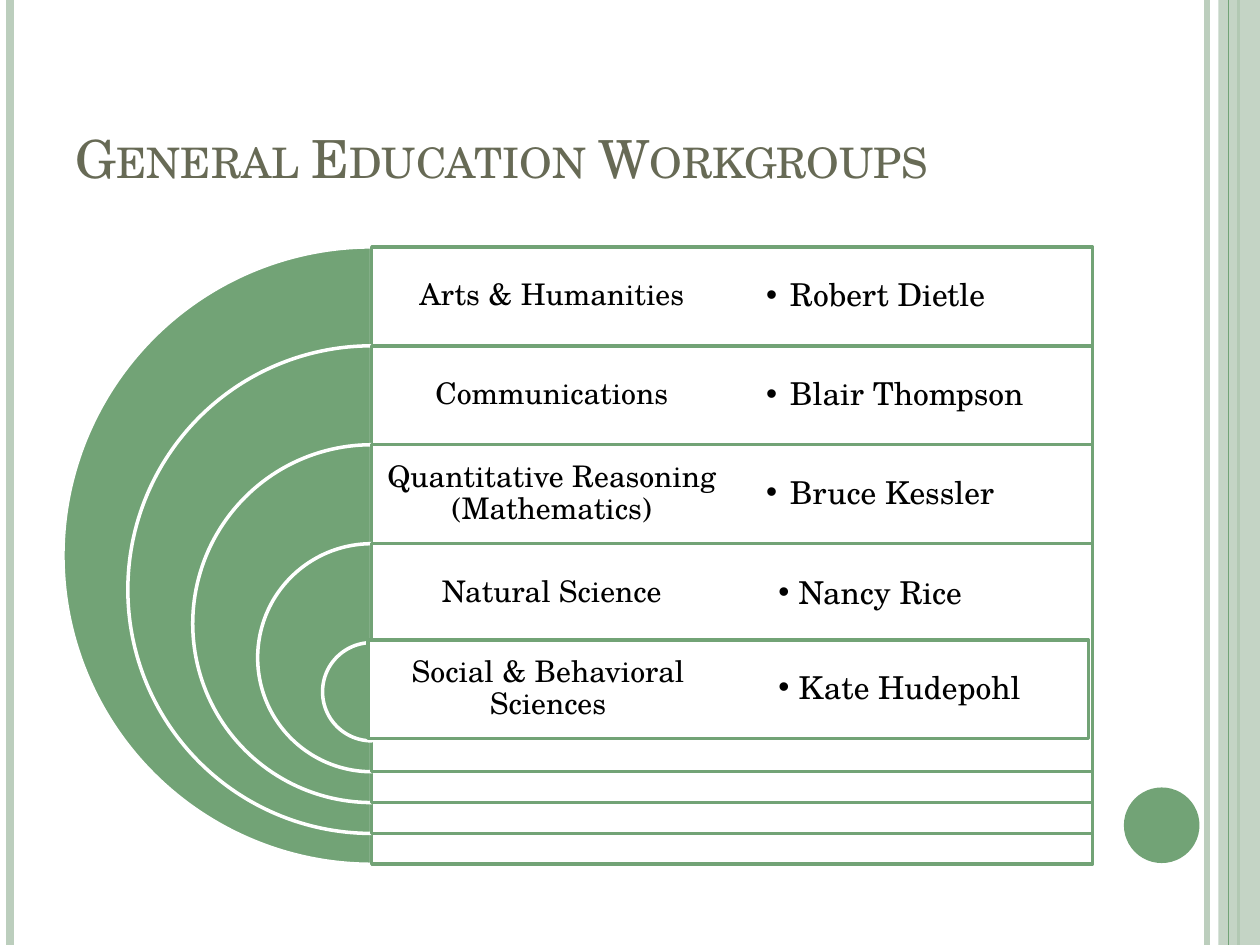
from dataclasses import dataclass

from lxml import etree
from pptx import Presentation
from pptx.dml.color import RGBColor
from pptx.enum import shapes, text
from pptx.oxml import ns
from pptx.util import Inches, Pt


@dataclass(frozen=True)
class Theme:
    font: str = "TeX Gyre Schola"
    green: RGBColor = RGBColor(0x72, 0xA3, 0x76)
    pale: RGBColor = RGBColor(0xBC, 0xCE, 0xBD)
    olive: RGBColor = RGBColor(0x67, 0x6A, 0x55)
    white: RGBColor = RGBColor(255, 255, 255)
    black: RGBColor = RGBColor(0, 0, 0)
    title_size: int = 30
    group_size: int = 17
    person_size: int = 18


THEME = Theme()

presentation = Presentation()
presentation.slide_width, presentation.slide_height = Inches(10), Inches(7.5)
slide = presentation.slides.add_slide(presentation.slide_layouts[6])


def add_block(kind, box, fill, line=None, opacity=100):
    """Add a preset shape; opacity is the fill's percentage."""
    shape = slide.shapes.add_shape(kind, *map(Inches, box))
    shape.shadow.inherit = False
    shape.fill.solid()
    shape.fill.fore_color.rgb = fill
    if opacity < 100:
        color = shape.fill._xPr.find(".//" + ns.qn("a:srgbClr"))
        etree.SubElement(color, ns.qn("a:alpha"), val=str(opacity * 1000))
    if line is None:
        shape.line.fill.background()
    else:
        shape.line.color.rgb = line
        shape.line.width = Pt(2)
    return shape


def add_text(box, words, size, color, anchor, inset, bullet_indent=None):
    """Add a one-paragraph text box, bulleted when bullet_indent is given."""
    frame = slide.shapes.add_textbox(*map(Inches, box)).text_frame
    frame.word_wrap = True
    frame.vertical_anchor = anchor
    frame.margin_left = frame.margin_right = Inches(inset[0])
    frame.margin_top = frame.margin_bottom = Inches(inset[1])
    paragraph = frame.paragraphs[0]
    paragraph.text = words
    paragraph.font.name = THEME.font
    paragraph.font.size = Pt(size)
    paragraph.font.color.rgb = color
    if bullet_indent is not None:
        properties = paragraph._p.get_or_add_pPr()
        properties.set("marL", str(Inches(bullet_indent)))
        properties.set("indent", str(-Inches(bullet_indent)))
        bullet_font = etree.Element(ns.qn("a:buFont"), typeface="Arial")
        bullet = etree.Element(ns.qn("a:buChar"), char="•")
        properties.insert(0, bullet_font)
        properties.insert(1, bullet)
    return paragraph


# Side rules, band and disc
for x, width, color in (
    (9.58, 3, THEME.pale),
    (0.08, 4.5, THEME.pale),
    (9.83, 1.5, THEME.green),
    (9.75, 0.75, THEME.green),
):
    if x == 9.83:
        pass
    rule = slide.shapes.add_connector(
        shapes.MSO_CONNECTOR.STRAIGHT, Inches(x), 0, Inches(x), Inches(7.5)
    )
    rule.line.color.rgb = color
    rule.line.width = Pt(width)
    etree.SubElement(rule._element.spPr, ns.qn("a:effectLst"))
    if x == 9.83:  # the band lies over this rule and under the next
        add_block(shapes.MSO_SHAPE.RECTANGLE, (9.67, 0, 0.33, 7.5), THEME.pale, opacity=87)
add_block(shapes.MSO_SHAPE.OVAL, (8.92, 6.25, 0.6, 0.6), THEME.green)

# Title
title = add_text((0.5, 0.3, 8.17, 1.25), "General Education Workgroups",
                 THEME.title_size, THEME.olive, text.MSO_ANCHOR.BOTTOM, (0.1, 0.05))
title.runs[0]._r.get_or_add_rPr().set("cap", "small")

# Nested half discs, each with a panel of the same height
CENTER, TOP, ROW = 2.95, 1.96, 0.785
DIAMETER, SHRINK = 4.9, 1.03
PANEL_WIDTH, HALF, TEXT_HEIGHT = 5.72, 2.86, 0.78
GROUPS = (
    "Arts & Humanities",
    "Communications",
    "Quantitative Reasoning (Mathematics)",
    "Natural Science",
    "Social & Behavioral Sciences",
)
for index, group in enumerate(GROUPS):
    top, diameter = TOP + index * ROW, DIAMETER - index * SHRINK
    pie = add_block(shapes.MSO_SHAPE.PIE, (CENTER - diameter / 2, top, diameter, diameter),
                    THEME.green, THEME.white)
    pie.adjustments[0], pie.adjustments[1] = 54, 162  # 90° to 270°

    left = CENTER
    if index == len(GROUPS) - 1:  # the last panel sits slightly up and left
        left, top = 2.92, 5.08
    add_block(shapes.MSO_SHAPE.RECTANGLE, (left, top, PANEL_WIDTH, diameter),
              THEME.white, THEME.green, opacity=90)
    label = add_text((left, top, HALF, TEXT_HEIGHT), group, THEME.group_size,
                     THEME.black, text.MSO_ANCHOR.MIDDLE, (0.07, 0.07))
    label.alignment = text.PP_ALIGN.CENTER
    label.line_spacing = 0.9

# People
for index, person in enumerate(("Robert Dietle", "Blair Thompson", "Bruce Kessler")):
    name = add_text((CENTER + HALF, TOP + index * ROW, HALF, TEXT_HEIGHT), person,
                    THEME.person_size, THEME.black, text.MSO_ANCHOR.MIDDLE, (0.27, 0.27), 0.19)
    name.line_spacing = 0.9
for person, top, width in (("Nancy Rice", 4.5, 1.83), ("Kate Hudepohl", 5.25, 2.25)):
    add_text((6.08, top, width, 0.4), person, THEME.person_size,
             THEME.black, text.MSO_ANCHOR.TOP, (0.1, 0.05), 0.16)

presentation.save("out.pptx")
